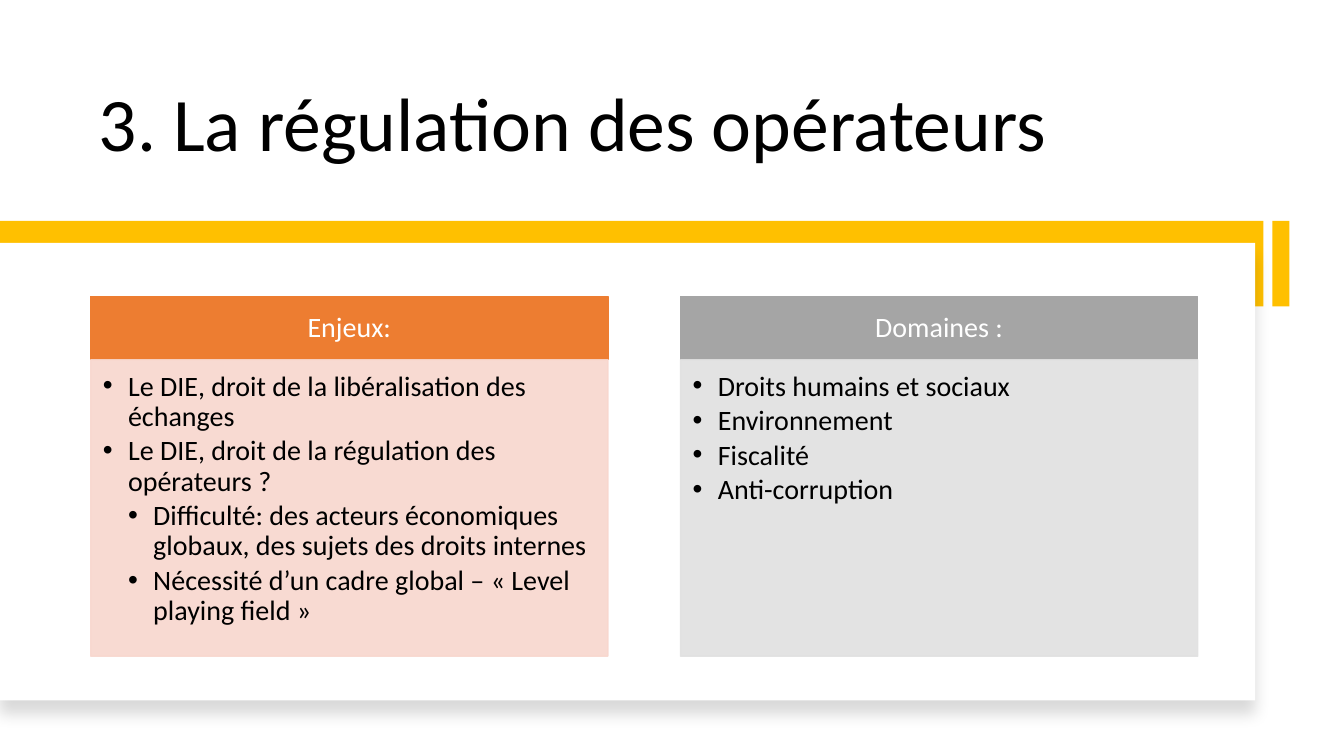
import pptx
import pptx.util
import pptx.dml.color
import pptx.enum.shapes
import pptx.enum.text
import pptx.oxml
import pptx.oxml.ns

TITLE = "3. La régulation des opérateurs"
CARDS = [
    ("Enjeux:", "ED7D31", "F8D7CE", [
        (1, "Le DIE, droit de la libéralisation des échanges"),
        (1, "Le DIE, droit de la régulation des opérateurs ?"),
        (2, "Difficulté: des acteurs économiques globaux, des sujets des droits internes"),
        (2, "Nécessité d’un cadre global – « Level playing field »"),
    ]),
    ("Domaines :", "A5A5A5", "E1E1E1", [
        (1, "Droits humains et sociaux"),
        (1, "Environnement"),
        (1, "Fiscalité"),
        (1, "Anti-corruption"),
    ]),
]
THEME = {"font": "Calibri", "title": 54, "body": 20,
         "dark": "000000", "light": "FFFFFF", "accent": "FFC000"}
SIZE = (1333, 750)
HEAD = (88, 42, 1010, 130)
BARS = [(1262, 219, 17, 85), (0, 219, 1253, 85)]
PANEL = (0, 241, 1245, 454)
LEFT, TOP, WIDE, STEP = 90, 294, 513, 585
CAP, BODY = 63, 294
INDENT = 25
NS = pptx.oxml.ns.nsdecls("a")
ANCHOR = pptx.enum.text.MSO_ANCHOR
ALIGN = pptx.enum.text.PP_ALIGN


def px(n):
    return pptx.util.Emu(n * 9144)


def rgb(code):
    return pptx.dml.color.RGBColor.from_string(code)


def add_rect(slide, box, color, edge=False, alpha=None):
    kind = pptx.enum.shapes.MSO_SHAPE.RECTANGLE
    rect = slide.shapes.add_shape(kind, *map(px, box))
    rect.shadow.inherit = False
    rect.fill.solid()
    rect.fill.fore_color.rgb = rgb(color)
    if edge:
        rect.line.color.rgb = rgb(color)
        rect.line.width = pptx.util.Pt(1)
    else:
        rect.line.fill.background()
    if alpha:
        for node in rect._element.spPr.iter(pptx.oxml.ns.qn("a:srgbClr")):
            node.append(pptx.oxml.parse_xml(f'<a:alpha {NS} val="{alpha * 1000}"/>'))
    return rect


def add_shade(rect):
    fx = rect._element.spPr.find(pptx.oxml.ns.qn("a:effectLst"))
    fx.append(pptx.oxml.parse_xml(
        f'<a:outerShdw {NS} blurRad="139700" dist="127000" dir="5400000" '
        'algn="t" rotWithShape="0"><a:srgbClr val="000000">'
        '<a:alpha val="15000"/></a:srgbClr></a:outerShdw>'))


def set_frame(frame, anchor, insets):
    frame.word_wrap = True
    frame.auto_size = pptx.enum.text.MSO_AUTO_SIZE.NONE
    frame.vertical_anchor = anchor
    (frame.margin_left, frame.margin_top,
     frame.margin_right, frame.margin_bottom) = map(px, insets)


def set_para(para, text, size, color, align=ALIGN.LEFT, after=0):
    para.text = text
    para.alignment = align
    para.line_spacing = 0.9
    para.space_before = pptx.util.Pt(0)
    para.space_after = pptx.util.Pt(after)
    para.font.name = THEME["font"]
    para.font.size = pptx.util.Pt(size)
    para.font.color.rgb = rgb(color)


def add_bullet(para, level):
    para.level = level
    props = para._p.get_or_add_pPr()
    props.set("marL", str(px(INDENT * level)))
    props.set("indent", str(px(-INDENT)))
    props.append(pptx.oxml.parse_xml(f'<a:buFont {NS} typeface="Arial"/>'))
    props.append(pptx.oxml.parse_xml(f'<a:buChar {NS} char="•"/>'))
    fonts = props.find(pptx.oxml.ns.qn("a:defRPr"))
    if fonts is not None:
        props.append(fonts)


def add_card(slide, left, card):
    label, dark, pale, items = card
    cap = add_rect(slide, (left, TOP, WIDE, CAP), dark, edge=True)
    set_frame(cap.text_frame, ANCHOR.MIDDLE, (16, 9, 16, 9))
    set_para(cap.text_frame.paragraphs[0], label, THEME["body"],
             THEME["light"], ALIGN.CENTER)
    body = add_rect(slide, (left, TOP + CAP, WIDE, BODY), pale, edge=True, alpha=90)
    frame = body.text_frame
    set_frame(frame, ANCHOR.TOP, (12, 12, 16, 17))
    for i, (level, text) in enumerate(items):
        para = frame.add_paragraph() if i else frame.paragraphs[0]
        set_para(para, text, THEME["body"], THEME["dark"], after=3)
        add_bullet(para, level)


def main():
    deck = pptx.Presentation()
    deck.slide_width, deck.slide_height = map(px, SIZE)
    slide = deck.slides.add_slide(deck.slide_layouts[5])
    title = slide.shapes.title
    title.left, title.top, title.width, title.height = map(px, HEAD)
    set_frame(title.text_frame, ANCHOR.BOTTOM, (10, 5, 10, 5))
    set_para(title.text_frame.paragraphs[0], TITLE, THEME["title"], THEME["dark"])
    for bar in BARS:
        add_rect(slide, bar, THEME["accent"])
    add_shade(add_rect(slide, PANEL, THEME["light"]))
    for i, card in enumerate(CARDS):
        add_card(slide, LEFT + i * STEP, card)
    deck.save("out.pptx")


if __name__ == "__main__":
    main()
